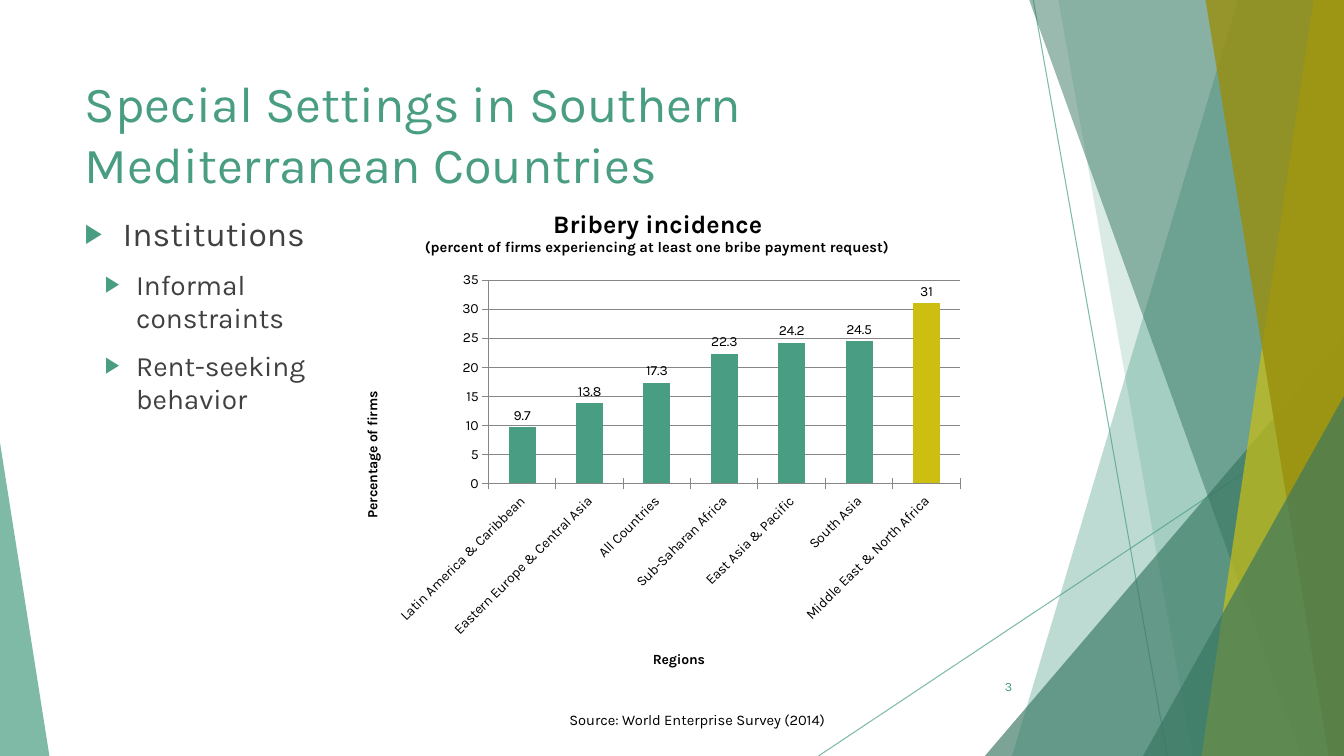
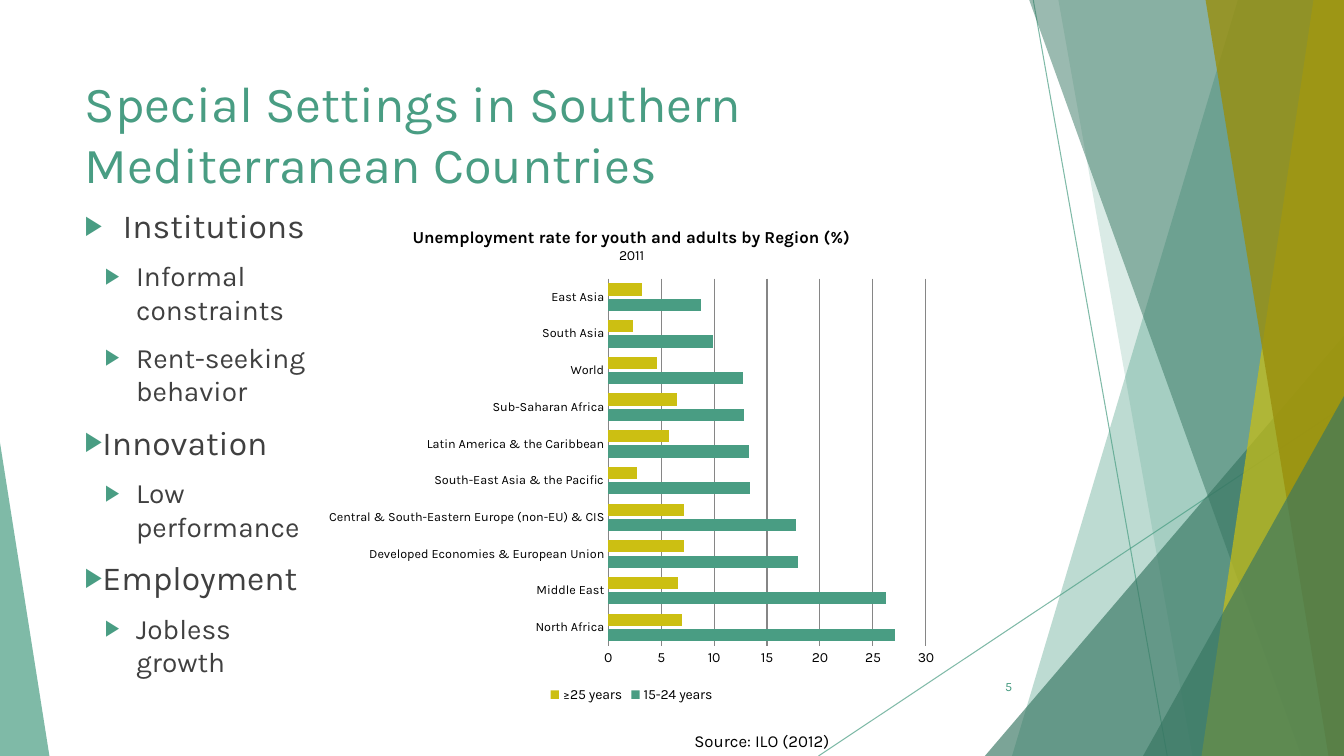
from lxml import etree
from pptx import Presentation
from pptx.chart.data import CategoryChartData
from pptx.dml.color import RGBColor
from pptx.enum.chart import (XL_CHART_TYPE as ChartType, XL_LABEL_POSITION as LabelPosition,
                             XL_LEGEND_POSITION as LegendPosition, XL_TICK_MARK as TickMark)
from pptx.enum.shapes import MSO_CONNECTOR as Connector, MSO_SHAPE as Preset
from pptx.enum.text import MSO_ANCHOR as Anchor, MSO_AUTO_SIZE as AutoSize, PP_ALIGN as Align
from pptx.oxml.ns import qn
from pptx.util import Inches, Pt

GREEN = RGBColor(0x49, 0x9D, 0x83)
DARK_GREEN = RGBColor(0x37, 0x76, 0x62)
YELLOW = RGBColor(0xCC, 0xBF, 0x12)
OLIVE = RGBColor(0x99, 0x8F, 0x0D)
BODY_GREY = RGBColor(0x40, 0x40, 0x40)
GRID_GREY = RGBColor(0x86, 0x86, 0x86)
BLACK = RGBColor(0, 0, 0)
FONT = "Karla"
WIDTH, HEIGHT = Inches(13.33), Inches(7.5)

# Boxes are left, top, width, height in percent of the slide
SLIDE_BOX = (0, 0, 100, 100)
TITLE_BOX = (5.55, 8.93, 70.5, 19.2)
NUMBER_BOX = (70.43, 88.13, 5.63, 5.33)
TITLE = "Special Settings in Southern Mediterranean Countries"

# Bullet styles: level, left margin, hanging indent (inches), size (points)
TOPIC = (0, 0.38, -0.38, 24)
TIGHT_TOPIC = (0, 0.07, -0.38, 24)
DETAIL = (1, 0.51, -0.31, 20)


def set_format(target, values):
    for name, value in values.items():
        setattr(target, name, value)


def set_font(font, size, color=BLACK, bold=False):
    set_format(font, {"name": FONT, "size": Pt(size), "bold": bold})
    font.color.rgb = color


def place(box):
    left, top, width, height = box
    return [int(share * length / 100) for share, length in
            ((left, WIDTH), (top, HEIGHT), (width, WIDTH), (height, HEIGHT))]


def move(shape, box):
    set_format(shape, dict(zip(("left", "top", "width", "height"), place(box))))


def set_alpha(shape, percent):
    for color in shape._element.spPr.iter(qn("a:srgbClr")):
        etree.SubElement(color, qn("a:alpha")).set("val", str(percent * 1000))


def paint(shape, color, alpha):
    shape.shadow.inherit = False
    shape.fill.solid()
    shape.fill.fore_color.rgb = color
    shape.line.fill.background()
    set_alpha(shape, alpha)


# Facets shared by all slides
def draw_facets(shapes, box):
    left, top, width, height = place(box)

    def point(x, y):
        return left + int(x * width / 100), top + int(y * height / 100)

    def line(start, end):
        connector = shapes.add_connector(Connector.STRAIGHT, *point(*start), *point(*end))
        connector.line.color.rgb = GREEN
        connector.line.width = Pt(0.75)
        set_alpha(connector, 70)
        etree.SubElement(connector._element.spPr, qn("a:effectLst"))
        return connector

    def band(top_x, bottom_x, color, alpha):
        builder = shapes.build_freeform(*point(top_x, 0))
        builder.add_line_segments([point(100, 0), point(100, 100), point(bottom_x, 100)])
        shape = builder.convert_to_shape()
        paint(shape, color, alpha)
        return shape

    def triangle(x, right, y, apex, color, alpha):
        start, end = point(x, y), point(right, 100)
        shape = shapes.add_shape(Preset.ISOSCELES_TRIANGLE, *start,
                                 end[0] - start[0], end[1] - start[1])
        shape.adjustments[0] = apex
        paint(shape, color, alpha)
        return shape

    return [
        line((76.88, 0), (86.85, 100)),
        line((100, 53.73), (60.9, 100)),
        band(92.1, 75.3, GREEN, 36),
        band(78.75, 88.73, GREEN, 20),
        triangle(73.28, 100, 44.4, 1, DARK_GREEN, 66),
        band(76.58, 96.83, DARK_GREEN, 50),
        band(97.73, 89.4, YELLOW, 70),
        band(89.7, 98.85, OLIVE, 80),
        triangle(85.05, 100, 52.4, 1, DARK_GREEN, 66),
        triangle(0, 3.68, 58.53, 0, GREEN, 70),
    ]


def move_to_layout(layout, drawn):
    tree = layout.shapes._spTree
    for index, shape in enumerate(drawn):
        shape._element.xpath(".//p:cNvPr")[0].set("id", str(100 + index))
        tree.insert(2 + index, shape._element)


# Text regions
def add_bullet(paragraph, margin, indent):
    properties = paragraph._p.get_or_add_pPr()
    properties.set("marL", str(Inches(margin)))
    properties.set("indent", str(Inches(indent)))
    color = etree.SubElement(properties, qn("a:buClr"))
    etree.SubElement(color, qn("a:srgbClr")).set("val", str(GREEN))
    for tag, name, value in (("a:buSzPct", "val", "80000"), ("a:buFont", "typeface", "Arial"),
                             ("a:buChar", "char", "▶")):
        etree.SubElement(properties, qn(tag)).set(name, value)


def fill_title(shape, box):
    move(shape, box)
    frame = shape.text_frame
    set_format(frame, {"text": TITLE, "vertical_anchor": Anchor.TOP,
                       "auto_size": AutoSize.NONE, "word_wrap": True})
    paragraph = frame.paragraphs[0]
    paragraph.alignment = Align.LEFT
    set_font(paragraph.runs[0].font, 36, GREEN)


def fill_list(shape, box, items):
    move(shape, box)
    frame = shape.text_frame
    set_format(frame, {"auto_size": AutoSize.NONE, "word_wrap": True})
    for index, (text, (level, margin, indent, size)) in enumerate(items):
        paragraph = frame.add_paragraph() if index else frame.paragraphs[0]
        add_bullet(paragraph, margin, indent)
        set_format(paragraph, {"level": level, "space_before": Pt(10 if index else 0)})
        run = paragraph.add_run()
        run.text = text
        set_font(run.font, size, BODY_GREY)


def add_label(slide, box, text, size, color=BLACK, align=Align.LEFT, anchor=Anchor.TOP):
    frame = slide.shapes.add_textbox(*place(box)).text_frame
    set_format(frame, {"word_wrap": True, "vertical_anchor": anchor})
    paragraph = frame.paragraphs[0]
    paragraph.alignment = align
    run = paragraph.add_run()
    run.text = text
    set_font(run.font, size, color)


# Charts
def write_lines(frame, lines):
    for index, (text, size, bold) in enumerate(lines):
        paragraph = frame.add_paragraph() if index else frame.paragraphs[0]
        run = paragraph.add_run()
        run.text = text
        set_font(run.font, size, bold=bold)


def add_bars(slide, box, kind, categories, series, title, maximum, gap, overlap, tick):
    data = CategoryChartData()
    data.categories = categories
    for name, values, _ in series:
        data.add_series(name, values)
    chart = slide.shapes.add_chart(kind, *place(box), data).chart
    set_font(chart.font, 10)
    set_format(chart, {"has_title": True, "has_legend": False})
    write_lines(chart.chart_title.text_frame, title)
    chart.chart_title.include_in_layout = False
    plot = chart.plots[0]
    set_format(plot, {"vary_by_categories": False, "gap_width": gap, "overlap": overlap})
    for bars, (_, _, color) in zip(plot.series, series):
        bars.invert_if_negative = False
        bars.format.fill.solid()
        bars.format.fill.fore_color.rgb = color
    set_format(chart.value_axis, {"minimum_scale": 0, "maximum_scale": maximum,
                                  "major_unit": 5, "has_major_gridlines": True})
    chart.value_axis.major_gridlines.format.line.color.rgb = GRID_GREY
    for axis in (chart.category_axis, chart.value_axis):
        set_format(axis, {"major_tick_mark": tick, "minor_tick_mark": TickMark.NONE})
        axis.format.line.color.rgb = GRID_GREY
    return chart


def add_bribery_chart(slide, box):
    chart = add_bars(
        slide, box, ChartType.COLUMN_CLUSTERED,
        ["Latin America & Caribbean", "Eastern Europe & Central Asia", "All Countries",
         "Sub-Saharan Africa", "East Asia & Pacific", "South Asia",
         "Middle East & North Africa"],
        [("Series 1", [9.7, 13.8, 17.3, 22.3, 24.2, 24.5, 31], GREEN)],
        [("Bribery incidence", 18, True),
         ("(percent of firms experiencing at least one bribe payment request)", 10.5, True)],
        35, 150, 0, TickMark.CROSS)
    for axis, text in ((chart.category_axis, "Regions"),
                       (chart.value_axis, "Percentage of firms")):
        write_lines(axis.axis_title.text_frame, [(text, 10, True)])
    bars = chart.plots[0].series[0]
    highlight = bars.points[6].format.fill
    highlight.solid()
    highlight.fore_color.rgb = YELLOW
    set_format(bars.data_labels, {"show_value": True, "position": LabelPosition.OUTSIDE_END})
    set_font(bars.data_labels.font, 10)


def add_unemployment_chart(slide, box):
    chart = add_bars(
        slide, box, ChartType.BAR_CLUSTERED,
        ["North Africa", "Middle East", "Developed Economies & European Union",
         "Central & South-Eastern Europe (non-EU) & CIS", "South-East Asia & the Pacific",
         "Latin America & the Caribbean", "Sub-Saharan Africa", "World", "South Asia",
         "East Asia"],
        [("15-24 years", [27.1, 26.2, 17.9, 17.7, 13.4, 13.3, 12.8, 12.7, 9.9, 8.8], GREEN),
         ("≥25 years", [7, 6.6, 7.2, 7.2, 2.7, 5.7, 6.5, 4.6, 2.3, 3.2], YELLOW)],
        [("Unemployment rate for youth and adults by Region (%)", 12, True),
         ("2011", 10, False)],
        30, 75, -25, TickMark.NONE)
    set_font(chart.category_axis.tick_labels.font, 9)
    chart.value_axis.format.line.fill.background()
    chart.has_legend = True
    set_format(chart.legend, {"position": LegendPosition.BOTTOM, "include_in_layout": False})
    set_font(chart.legend.font, 10)


def add_content_slide(presentation, number, list_box, items, add_chart, chart_box,
                      source, source_box, source_size):
    slide = presentation.slides.add_slide(presentation.slide_layouts[1])
    fill_title(slide.shapes.title, TITLE_BOX)
    fill_list(slide.placeholders[1], list_box, items)
    add_chart(slide, chart_box)
    add_label(slide, NUMBER_BOX, number, 9, GREEN, Align.RIGHT, Anchor.MIDDLE)
    add_label(slide, source_box, source, source_size)
    return slide


def main():
    presentation = Presentation()
    set_format(presentation, {"slide_width": WIDTH, "slide_height": HEIGHT})
    institutions = [("Institutions", TOPIC), ("Informal constraints", DETAIL),
                    ("Rent-seeking behavior", DETAIL)]
    slide = add_content_slide(
        presentation, "3", (5.55, 27.47, 18.75, 66), institutions,
        add_bribery_chart, (25.5, 25.07, 46.88, 66),
        "Source: World Enterprise Survey (2014)", (41.63, 93.33, 22.2, 3.73), 10.5)
    move_to_layout(slide.slide_layout, draw_facets(slide.shapes, SLIDE_BOX))
    add_content_slide(
        presentation, "5", (5.55, 26.4, 18.75, 66),
        institutions + [("Innovation", TIGHT_TOPIC), ("Low performance", DETAIL),
                        ("Employment", TIGHT_TOPIC), ("Jobless growth", DETAIL)],
        add_unemployment_chart, (23.55, 27.47, 46.88, 66),
        "Source: ILO (2012)", (50.93, 96, 12.53, 4), 12)
    presentation.save("out.pptx")


if __name__ == "__main__":
    main()
